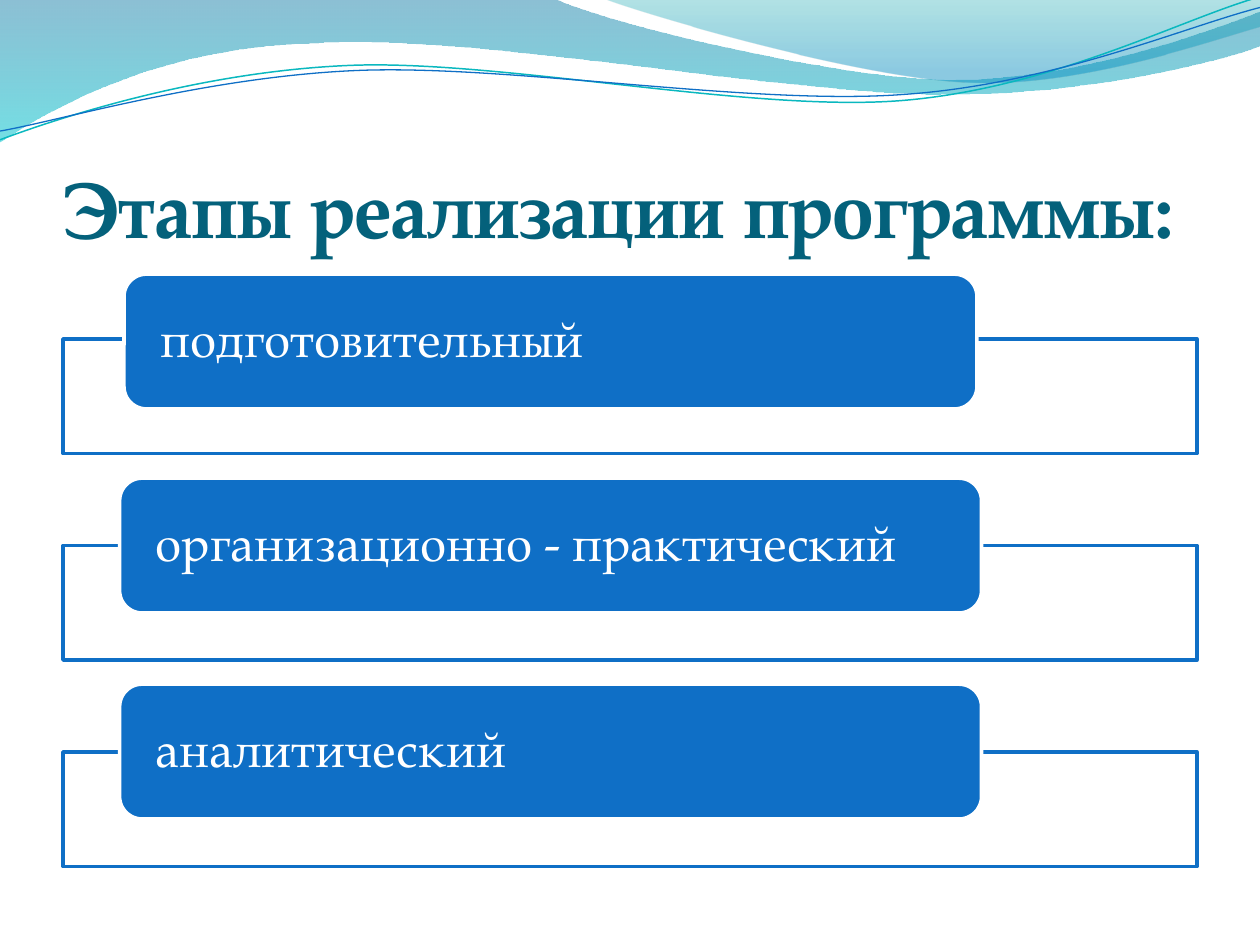
import math
from dataclasses import dataclass

import pptx
import pptx.dml.color
import pptx.enum.shapes
import pptx.enum.text
import pptx.oxml
import pptx.oxml.ns
import pptx.util

Pt = pptx.util.Pt
qn = pptx.oxml.ns.qn
Point = tuple[float, float]


@dataclass(frozen=True)
class Theme:
    font: str = "TeX Gyre Pagella"
    title_size: float = 45
    label_size: float = 28
    title: str = "04617B"
    accent: str = "0F6FC6"
    teal: str = "0AB8BF"
    white: str = "FFFFFF"
    outline: float = 2


@dataclass(frozen=True)
class Curve:
    """A cubic Bezier segment; the pen's position is its first point."""
    control_1: Point
    control_2: Point
    end: Point


@dataclass(frozen=True)
class Stop:
    color: str
    position: float
    opacity: int


@dataclass(frozen=True)
class Wave:
    """An outline of straight points and curves, filled from top to bottom."""
    outline: list
    stops: tuple[Stop, Stop]


@dataclass(frozen=True)
class Strand:
    """A thin curve, stored as a tilted shape around its centre."""
    outline: list
    center: Point
    color: str
    width: float


@dataclass(frozen=True)
class Stage:
    label: str
    left: float
    top: float
    width: float


THEME = Theme()

WAVES = [
    Wave([(0, 0), (316.8, -0.7),
          Curve((342.7, 12.2), (478.1, 45.4), (545.8, 45.4)),
          Curve((614.2, 45.4), (689.8, 18.7), (720, 6.5)), (720.7, 25.9),
          Curve((707.8, 31.7), (626.4, 54.7), (537.1, 54)),
          Curve((447.8, 54), (275, 20.2), (185, 24.5)),
          Curve((92.9, 25.9), (33.1, 59.8), (-0.7, 81.4))],
         (Stop("0074A1", 0, 45), Stop("00C6CF", 1, 55))),
    Wave([(344.9, -0.7),
          Curve((366.5, 7.9), (491, 44.6), (553.7, 46.8)),
          Curve((616.3, 49.7), (691.9, 23), (720, 15.1)), (720, 0)],
         (Stop("00A1A9", 0, 30), Stop("008BBF", 0.8, 45))),
]

STRAND_TILT = 2.7
STRANDS = [
    Strand([(0, 79.9),
            Curve((34.6, 67), (113.8, 41), (199.4, 37.4)),
            Curve((284.4, 33.8), (427, 64), (513.4, 57.6)),
            Curve((599.8, 51.1), (675.4, 10.8), (718.6, -1.4))],
           (359.3, 41.4), THEME.teal, 0.85),
    Strand([(0, 74.9),
            Curve((33.8, 69.1), (118.1, 43.9), (203.8, 40.3)),
            Curve((290.2, 36.7), (429.8, 60.5), (516.2, 54)),
            Curve((601.9, 48.2), (677.5, 15.1), (720, 4.3))],
           (359.6, 42.5), THEME.accent, 0.75),
]

STAGES = [
    Stage("подготовительный", 70.9, 156.7, 487.4),
    Stage("организационно - практический", 68.4, 273.3, 492.5),
    Stage("аналитический", 68.4, 391, 492.5),
]
BOX_HEIGHT = 77
TEXT_MARGIN = 3.75
FRAME_LEFT, FRAME_TOP = 36, 193.7
FRAME_WIDTH, FRAME_HEIGHT = 648, 65.5
FRAME_PITCH = 118


def rgb(color: str) -> pptx.dml.color.RGBColor:
    return pptx.dml.color.RGBColor.from_string(color)


def set_opacity(color_parent, percent: int) -> None:
    """Add an alpha value to the first colour inside the element."""
    color_parent.find(".//" + qn("a:srgbClr")).append(pptx.oxml.parse_xml(
        f'<a:alpha {pptx.oxml.ns.nsdecls("a")} val="{percent * 1000}"/>'))


def corners(part) -> list[Point]:
    return [part.control_1, part.control_2, part.end] if isinstance(part, Curve) else [part]


def turn(point: Point, center: Point, degrees: float) -> Point:
    angle = math.radians(degrees)
    x, y = point[0] - center[0], point[1] - center[1]
    return (center[0] + x * math.cos(angle) - y * math.sin(angle),
            center[1] + x * math.sin(angle) + y * math.cos(angle))


def add_outline(page, outline: list, close: bool):
    """Build a freeform through all corners, then bend each curve's three lines."""
    points = [(Pt(x), Pt(y)) for part in outline for x, y in corners(part)]
    builder = page.shapes.build_freeform(*points[0])
    builder.add_line_segments(points[1:], close=close)
    shape = builder.convert_to_shape()
    shape.shadow.inherit = False
    lines = iter(list(shape._element.spPr.iter(qn("a:lnTo"))))
    for part in outline[1:]:
        segment = [next(lines) for _ in corners(part)]
        if isinstance(part, Curve):
            bend = pptx.oxml.parse_xml(f'<a:cubicBezTo {pptx.oxml.ns.nsdecls("a")}/>')
            segment[0].addprevious(bend)
            for line in segment:
                bend.append(line[0])
                line.getparent().remove(line)
    return shape


def add_wave(page, wave: Wave) -> None:
    shape = add_outline(page, wave.outline, close=True)
    shape.line.fill.background()
    shape.fill.gradient()
    shape.fill.gradient_angle = 270
    elements = shape._element.spPr.iter(qn("a:gs"))
    for gradient_stop, element, stop in zip(shape.fill.gradient_stops, elements, wave.stops):
        gradient_stop.color.rgb = rgb(stop.color)
        gradient_stop.position = stop.position
        set_opacity(element, stop.opacity)


def add_strand(page, strand: Strand) -> None:
    level = []
    for part in strand.outline:
        turned = [turn(point, strand.center, STRAND_TILT) for point in corners(part)]
        level.append(Curve(*turned) if isinstance(part, Curve) else turned[0])
    shape = add_outline(page, level, close=False)
    shape.rotation = 360 - STRAND_TILT
    shape.fill.background()
    shape.line.color.rgb = rgb(strand.color)
    shape.line.width = Pt(strand.width)


def add_box(page, kind, left: float, top: float, width: float, height: float,
            fill: str, line: str):
    box = page.shapes.add_shape(kind, Pt(left), Pt(top), Pt(width), Pt(height))
    box.shadow.inherit = False
    box.fill.solid()
    box.fill.fore_color.rgb = rgb(fill)
    box.line.color.rgb = rgb(line)
    box.line.width = Pt(THEME.outline)
    return box


def add_text(page, text: str, left: float, top: float, width: float, height: float,
             size: float, color: str, side_inset: float, anchor):
    frame = page.shapes.add_textbox(Pt(left), Pt(top), Pt(width), Pt(height)).text_frame
    frame.word_wrap = True
    frame.vertical_anchor = anchor
    frame.margin_left = frame.margin_right = Pt(side_inset)
    frame.margin_top = frame.margin_bottom = 0
    para = frame.paragraphs[0]
    para.text = text
    para.font.name = THEME.font
    para.font.size = Pt(size)
    para.font.color.rgb = rgb(color)
    return para


def add_stage(page, stage: Stage, frame_top: float) -> None:
    kinds = pptx.enum.shapes.MSO_SHAPE
    frame = add_box(page, kinds.RECTANGLE, FRAME_LEFT, frame_top, FRAME_WIDTH,
                    FRAME_HEIGHT, THEME.white, THEME.accent)
    set_opacity(frame._element.spPr, 90)
    add_box(page, kinds.ROUNDED_RECTANGLE, stage.left, stage.top, stage.width,
            BOX_HEIGHT, THEME.accent, THEME.white)
    para = add_text(page, stage.label, stage.left + TEXT_MARGIN, stage.top + TEXT_MARGIN,
                    stage.width - 2 * TEXT_MARGIN, BOX_HEIGHT - 2 * TEXT_MARGIN,
                    THEME.label_size, THEME.white, 17, pptx.enum.text.MSO_ANCHOR.MIDDLE)
    para.line_spacing = 0.9


def main() -> None:
    deck = pptx.Presentation()
    deck.slide_width, deck.slide_height = Pt(720), Pt(540)
    page = deck.slides.add_slide(deck.slide_layouts[6])
    for wave in WAVES:
        add_wave(page, wave)
    for strand in STRANDS:
        add_strand(page, strand)
    title = add_text(page, "Этапы реализации программы:", 36, 55.4, 648, 90,
                     THEME.title_size, THEME.title, 0, pptx.enum.text.MSO_ANCHOR.BOTTOM)
    title.font.bold = True
    for index, stage in enumerate(STAGES):
        add_stage(page, stage, FRAME_TOP + index * FRAME_PITCH)
    deck.save("out.pptx")


if __name__ == "__main__":
    main()
